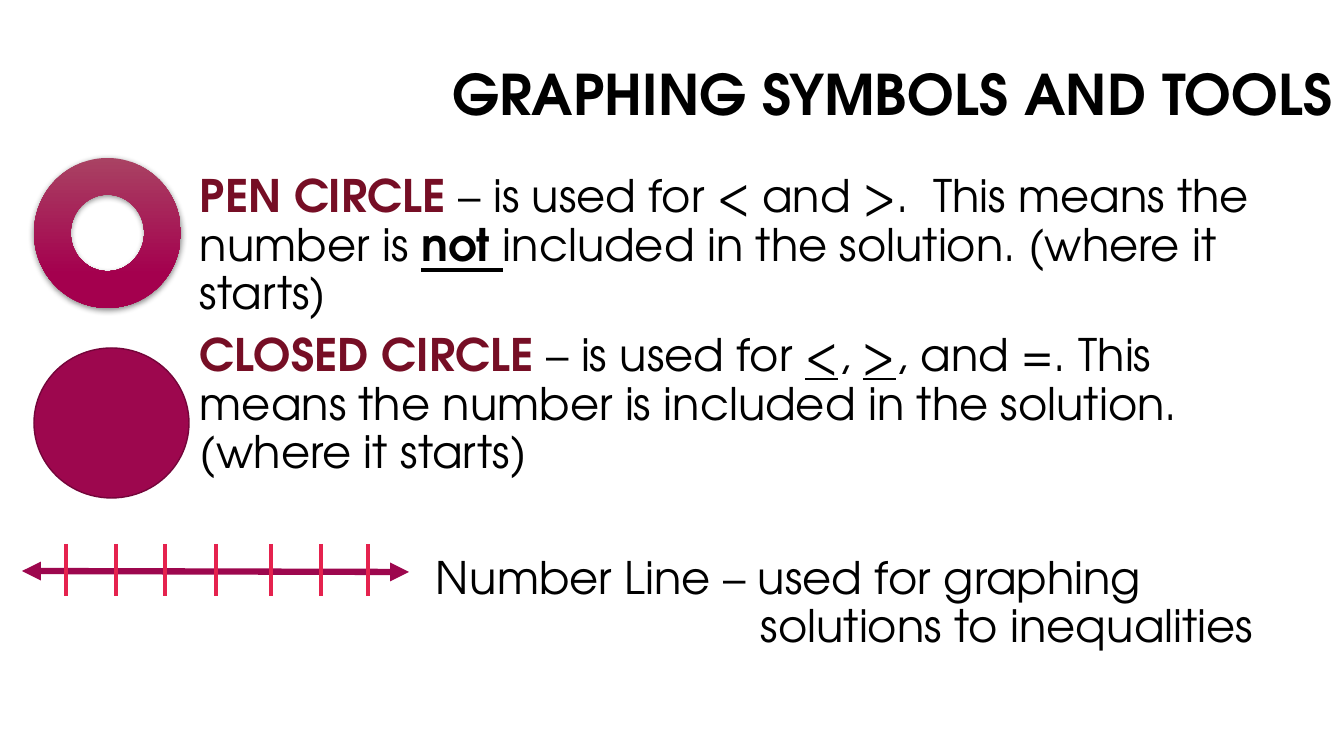
"""Builds a slide on the symbols and tools for graphing inequalities."""
from lxml import etree
from pptx import Presentation
from pptx.dml.color import RGBColor
from pptx.enum.shapes import MSO_CONNECTOR, MSO_SHAPE
from pptx.enum.text import MSO_ANCHOR as ANCHOR, PP_ALIGN as ALIGN
from pptx.oxml import parse_xml
from pptx.oxml.ns import nsdecls, qn
from pptx.util import Emu, Pt

BLACK = RGBColor(0x00, 0x00, 0x00)
MAROON = RGBColor(0x76, 0x0E, 0x25)
PLUM = RGBColor(0x9D, 0x07, 0x4E)
DARK_PLUM = RGBColor(0x74, 0x05, 0x3A)
ROSE = RGBColor(0xA9, 0x42, 0x63)
MAGENTA = RGBColor(0xA4, 0x00, 0x4E)
RED = RGBColor(0xE5, 0x22, 0x4E)
FONT = "TeX Gyre Adventor"
TICKS = (66, 116, 165, 216, 271, 321, 368)


def px(n):
    return Emu(round(n * 914400 / 100.8))


def add_box(s, x, y, w, h, anchor=ANCHOR.TOP):
    tf = s.shapes.add_textbox(px(x), px(y), px(w), px(h)).text_frame
    tf.word_wrap = True
    tf.vertical_anchor = anchor
    return tf


def add_run(p, text, size=32, color=BLACK, bold=False, underline=False):
    r = p.add_run()
    r.text = text
    f = r.font
    f.name, f.size, f.bold, f.underline = FONT, Pt(size), bold, underline
    f.color.rgb = color


def add_term(p, term):
    add_run(p, term, color=MAROON, bold=True)


def add_round(s, kind, x, y, w, h):
    sp = s.shapes.add_shape(kind, px(x), px(y), px(w), px(h))
    sp.shadow.inherit = False
    return sp


def add_line(group, x1, y1, x2, y2, color, width):
    c = group.shapes.add_connector(MSO_CONNECTOR.STRAIGHT, px(x1), px(y1), px(x2), px(y2))
    c.line.color.rgb = color
    c.line.width = Pt(width)
    etree.SubElement(c._element.spPr, qn("a:effectLst"))
    return c


def add_title(s):
    p = add_box(s, 418, 26, 925, 142, ANCHOR.MIDDLE).paragraphs[0]
    p.alignment = ALIGN.RIGHT
    p.line_spacing = 0.9
    add_run(p, "GRAPHING SYMBOLS AND TOOLS", size=40, bold=True)


def add_definitions(s):
    tf = add_box(s, 190, 169, 1121, 579)
    opened, closed, number_line = tf.paragraphs[0], tf.add_paragraph(), tf.add_paragraph()
    for p in tf.paragraphs:
        p.line_spacing = 0.9
    closed.space_before = Pt(10)
    number_line.space_before = Pt(55)

    add_term(opened, "PEN CIRCLE ")
    add_run(opened, "– is used for < and >.  This means the number is ")
    add_run(opened, "not ", bold=True, underline=True)
    add_run(opened, "included in the solution. (where it starts)")

    add_term(closed, "CLOSED CIRCLE ")
    add_run(closed, "– is used for ")
    add_run(closed, "<", underline=True)
    add_run(closed, ", ")
    add_run(closed, ">", underline=True)
    add_run(closed, ", and =. This means the number is included in the solution. (where it starts)")

    pPr = number_line._p.get_or_add_pPr()
    pPr.set("marL", str(px(561)))
    pPr.set("indent", str(px(-325)))
    add_run(number_line, "Number Line – used for graphing solutions to inequalities")


def add_open_circle(s):
    sp = add_round(s, MSO_SHAPE.DONUT, 34, 158, 147, 150)
    sp.line.fill.background()
    sp.fill.gradient()
    sp.fill.gradient_angle = 270
    for stop, color, position in zip(sp.fill.gradient_stops, (ROSE, MAGENTA), (0, 0.78)):
        stop.color.rgb = color
        stop.position = position
    sp._element.spPr.find(qn("a:effectLst")).append(parse_xml(
        f'<a:outerShdw {nsdecls("a")} blurRad="{Pt(4.5)}" dist="{Pt(1.5)}" dir="5400000" '
        'rotWithShape="0"><a:srgbClr val="000000"><a:alpha val="48000"/></a:srgbClr></a:outerShdw>'))


def add_closed_circle(s):
    sp = add_round(s, MSO_SHAPE.OVAL, 34, 348, 155, 150)
    sp.fill.solid()
    sp.fill.fore_color.rgb = PLUM
    sp.line.color.rgb = DARK_PLUM
    sp.line.width = Pt(1)


def add_number_line(s):
    group = s.shapes.add_group_shape()
    axis = add_line(group, 22, 571, 409, 572, PLUM, 4.5)
    for end in ("a:headEnd", "a:tailEnd"):
        etree.SubElement(axis.line._get_or_add_ln(), qn(end), type="triangle")
    for x in TICKS:
        add_line(group, x, 544, x, 596, RED, 2.25)


def main():
    prs = Presentation()
    prs.slide_width, prs.slide_height = px(1344), px(756)
    s = prs.slides.add_slide(prs.slide_layouts[6])
    add_title(s)
    add_definitions(s)
    add_open_circle(s)
    add_closed_circle(s)
    add_number_line(s)
    prs.save("out.pptx")


if __name__ == "__main__":
    main()
